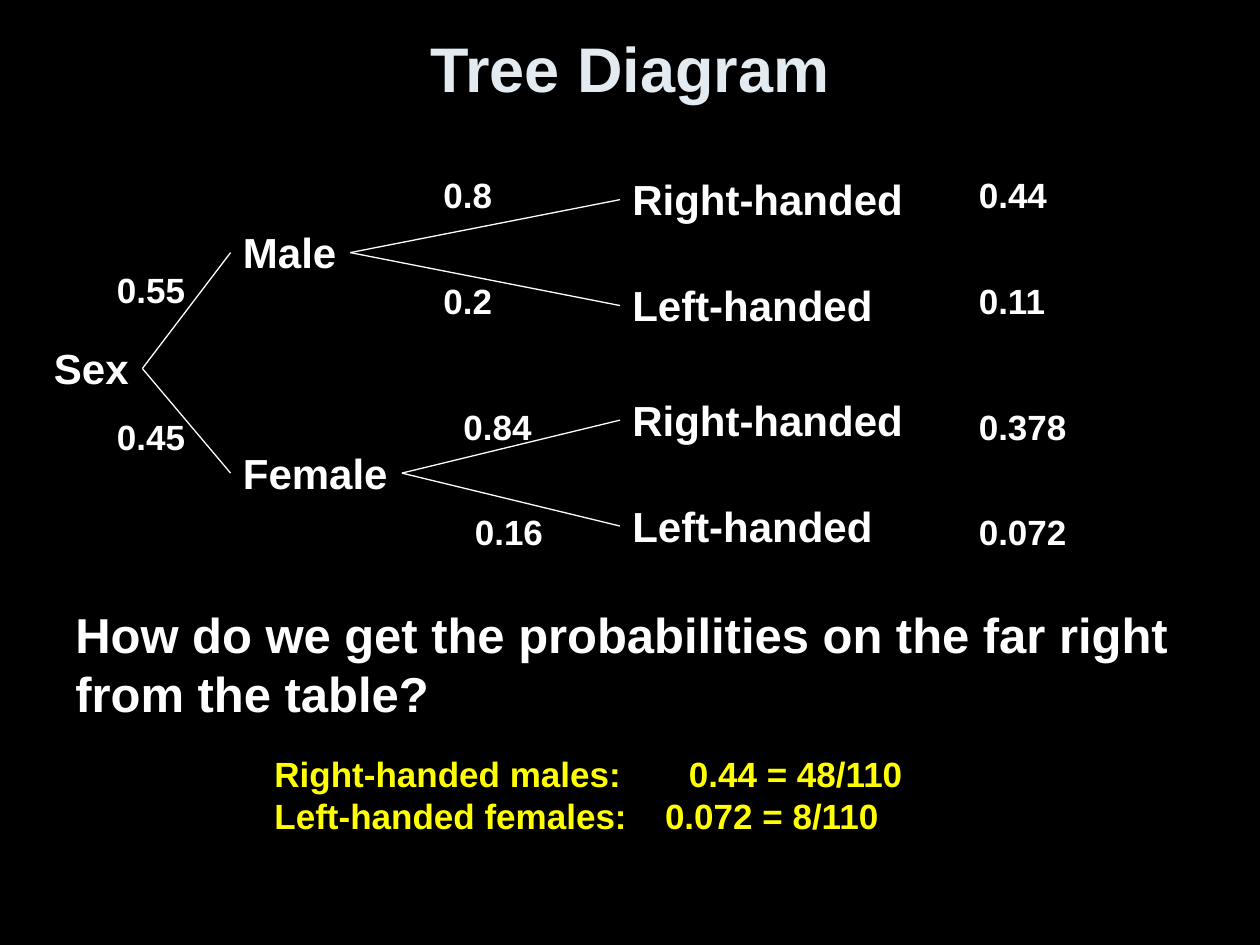
import pptx
import pptx.dml.color
import pptx.enum.shapes
import pptx.enum.text
import pptx.oxml
import pptx.oxml.ns
import pptx.util
from pptx.util import Inches

COLORS = {"background": "000000", "title": "E3EBF1", "text": "FFFFFF", "answer": "FFFF00"}
LEFT_SIDE, RIGHT_SIDE = 1, 3

presentation = pptx.Presentation()
presentation.slide_width = Inches(10)
presentation.slide_height = Inches(7.5)
slide = presentation.slides.add_slide(presentation.slide_layouts[6])
slide.background.fill.solid()
slide.background.fill.fore_color.rgb = pptx.dml.color.RGBColor.from_string(COLORS["background"])


def add_text(text, left, top, width, height, size=24, color="text", wrap=False,
             align=pptx.enum.text.PP_ALIGN.LEFT,
             anchor=pptx.enum.text.MSO_ANCHOR.TOP, tab_stops=()):
    """Add a bold text box; each line is a paragraph with its own tab stop."""
    shape = slide.shapes.add_textbox(Inches(left), Inches(top), Inches(width), Inches(height))
    frame = shape.text_frame
    frame.word_wrap = wrap
    frame.vertical_anchor = anchor
    frame.text = text
    for paragraph in frame.paragraphs:
        paragraph.alignment = align
    for paragraph, stop in zip(frame.paragraphs, tab_stops):
        properties = paragraph._p.get_or_add_pPr()
        tab_list = pptx.oxml.parse_xml(f"<a:tabLst {pptx.oxml.ns.nsdecls('a')}/>")
        tab = pptx.oxml.parse_xml(
            f'<a:tab {pptx.oxml.ns.nsdecls("a")} pos="{Inches(stop)}" algn="l"/>')
        tab_list.append(tab)
        properties.append(tab_list)
    for paragraph in frame.paragraphs:
        for run in paragraph.runs:
            run.font.name = "Arial"
            run.font.size = pptx.util.Pt(size)
            run.font.bold = True
            run.font.color.rgb = pptx.dml.color.RGBColor.from_string(COLORS[color])
    return shape


# Title and question
add_text("Tree Diagram", 0.5, 0.1, 9, 0.87, size=36, color="title", wrap=True,
         align=pptx.enum.text.PP_ALIGN.CENTER, anchor=pptx.enum.text.MSO_ANCHOR.MIDDLE)
add_text("How do we get the probabilities on the far right from the table?",
         0.5, 4.75, 9, 1.17, size=28, wrap=True)

# Tree nodes
nodes = {}
for key, text, left, top, width in [
    ("sex", "Sex", 0.33, 2.67, 0.8),
    ("male", "Male", 1.83, 1.75, 0.95),
    ("female", "Female", 1.83, 3.5, 1.36),
    ("male right", "Right-handed", 4.92, 1.33, 2.37),
    ("male left", "Left-handed", 4.92, 2.17, 2.13),
    ("female right", "Right-handed", 4.92, 3.08, 2.37),
    ("female left", "Left-handed", 4.92, 3.92, 2.13),
]:
    nodes[key] = add_text(text, left, top, width, 0.51)

# Branches
for parent, child in [
    ("sex", "male"), ("sex", "female"),
    ("male", "male right"), ("male", "male left"),
    ("female", "female right"), ("female", "female left"),
]:
    branch = slide.shapes.add_connector(pptx.enum.shapes.MSO_CONNECTOR.STRAIGHT, 0, 0, 0, 0)
    branch.begin_connect(nodes[parent], RIGHT_SIDE)
    branch.end_connect(nodes[child], LEFT_SIDE)
    branch.line.width = pptx.util.Pt(0.75)
    branch.line.color.rgb = pptx.dml.color.RGBColor.from_string(COLORS["text"])
    branch._element.spPr.append(
        pptx.oxml.parse_xml(f"<a:effectLst {pptx.oxml.ns.nsdecls('a')}/>"))

# Branch probabilities, then joint probabilities on the far right
for text, left, top, width in [
    ("0.55", 0.83, 2.08, 0.75), ("0.45", 0.83, 3.25, 0.75),
    ("0.8", 3.42, 1.33, 0.59), ("0.2", 3.42, 2.17, 0.59),
    ("0.84", 3.58, 3.17, 0.75), ("0.16", 3.67, 4, 0.75),
    ("0.44", 7.67, 1.33, 0.75), ("0.11", 7.67, 2.17, 0.73),
    ("0.378", 7.67, 3.17, 0.9), ("0.072", 7.67, 4, 0.9),
]:
    add_text(text, left, top, width, 0.44, size=20)

# Answer
add_text("Right-handed males:\t0.44 = 48/110\nLeft-handed females:\t0.072 = 8/110",
         2.08, 5.92, 5.3, 0.77, size=20, color="answer", tab_stops=(3.29, 3.1))

presentation.save("out.pptx")
